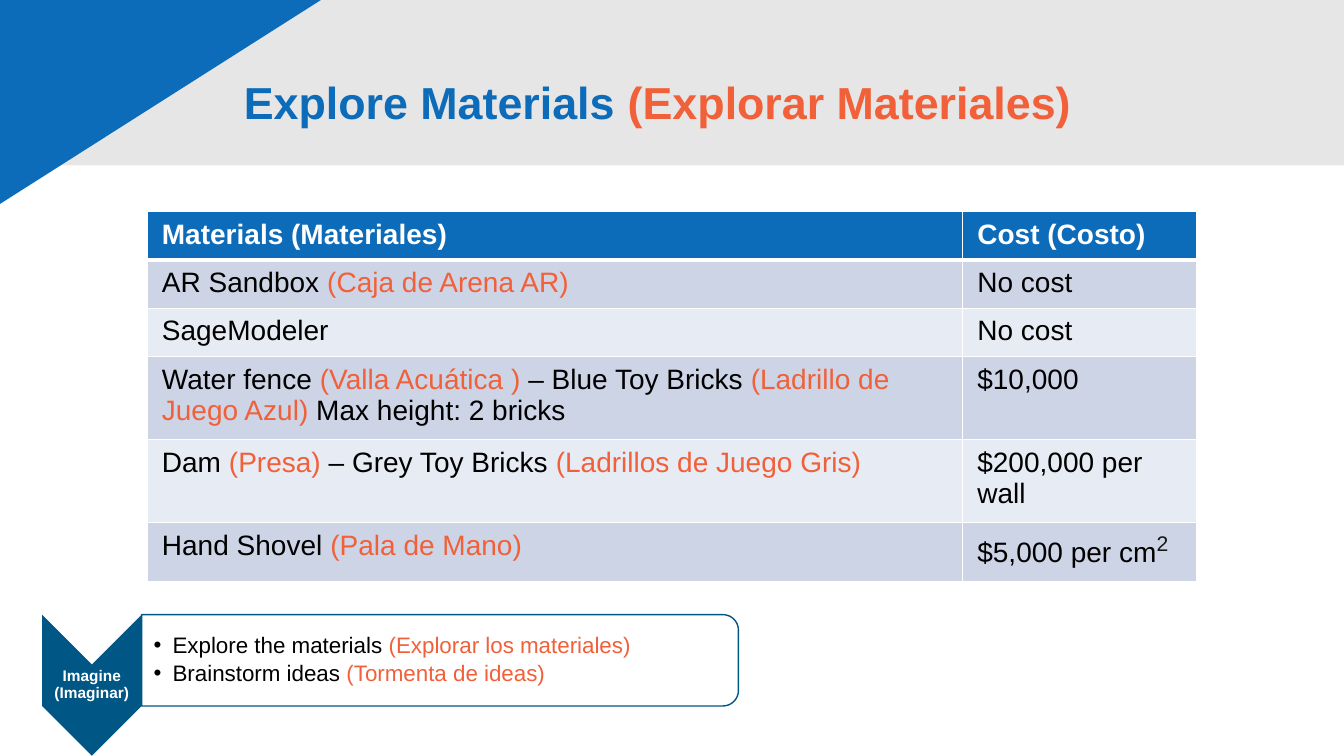
import math

import lxml.etree
import pptx
import pptx.dml.color
import pptx.enum.shapes
import pptx.enum.text
import pptx.oxml.ns
import pptx.util

Cm = pptx.util.Cm
Pt = pptx.util.Pt
qn = pptx.oxml.ns.qn
ALIGN = pptx.enum.text.PP_ALIGN
MIDDLE = pptx.enum.text.MSO_ANCHOR.MIDDLE

BLUE, NAVY, ORANGE = "0D6CB9", "005786", "F16038"
GREY, WHITE, BLACK = "E7E6E6", "FFFFFF", "000000"
ROW_FILLS = ("CCD4E6", "E7EBF3")

# A bar separates English from Spanish text.
MATERIALS = [
    ("AR Sandbox |(Caja de Arena AR)", "No cost"),
    ("SageModeler", "No cost"),
    ("Water fence |(Valla Acuática )| – Blue Toy Bricks |(Ladrillo de Juego Azul)"
     "| Max height: 2 bricks", "$10,000"),
    ("Dam |(Presa)| – Grey Toy Bricks |(Ladrillos de Juego Gris)", "$200,000 per wall"),
    ("Hand Shovel |(Pala de Mano)", "$5,000 per cm"),
]
ROW_HEIGHTS = (1.22, 1.22, 1.22, 2.09, 2.09, 1.48)
COLUMN_WIDTHS = (20.55, 5.89)
STEPS = ("Explore the materials |(Explorar los materiales)",
         "Brainstorm ideas |(Tormenta de ideas)")


def rgb(color):
    return pptx.dml.color.RGBColor.from_string(color)


def write_text(para, text, size=20, color=BLACK, bold=False, align=ALIGN.LEFT,
               line_spacing=None, superscript=False):
    """Add text to a paragraph, with every second bar-separated part in orange."""
    para.alignment = align
    if line_spacing:
        para.line_spacing = line_spacing
    for index, part in enumerate(text.split("|")):
        span = para.add_run()
        span.text = part
        span.font.name = "Arial"
        span.font.size = Pt(size)
        span.font.bold = bold
        span.font.color.rgb = rgb(ORANGE if index % 2 else color)
        if superscript:
            span._r.get_or_add_rPr().set("baseline", "30000")


def set_margins(holder, left, top, right, bottom):
    holder.margin_left, holder.margin_top = Cm(left), Cm(top)
    holder.margin_right, holder.margin_bottom = Cm(right), Cm(bottom)


def paint(shape, fill, line=None):
    shape.shadow.inherit = False
    shape.fill.solid()
    shape.fill.fore_color.rgb = rgb(fill)
    if line:
        shape.line.color.rgb = rgb(line)
        shape.line.width = Pt(1)
    else:
        shape.line.fill.background()


def add_outline(page, points, fill, line=None):
    """Add a closed shape through points given in centimetres."""
    corners = [(Cm(x), Cm(y)) for x, y in points]
    builder = page.shapes.build_freeform(*corners[0])
    builder.add_line_segments(corners[1:], close=True)
    shape = builder.convert_to_shape()
    paint(shape, fill, line)
    return shape


def add_header(page, width, height):
    band = page.shapes.add_shape(pptx.enum.shapes.MSO_SHAPE.RECTANGLE,
                                 0, 0, Cm(width), Cm(height))
    paint(band, GREY)
    add_outline(page, [(0, 0), (8.09, 0), (0, 5.14)], BLUE)

    title = page.shapes.title
    page.shapes._spTree.append(title._element)
    title.left, title.top = Cm(5.89), Cm(0.81)
    title.width, title.height = Cm(24.64), Cm(3.68)
    frame = title.text_frame
    frame.word_wrap = True
    frame.auto_size = pptx.enum.text.MSO_AUTO_SIZE.NONE
    frame.vertical_anchor = MIDDLE
    write_text(frame.paragraphs[0], "Explore Materials |(Explorar Materiales)",
               size=32, color=BLUE, bold=True, line_spacing=0.9)


def format_cell(cell, fill, top=1, bottom=1):
    """Set margins, fill and white borders; top and bottom are in points."""
    set_margins(cell, 0.37, 0.18, 0.37, 0.18)
    properties = cell._tc.get_or_add_tcPr()
    for side, width in (("L", 1), ("R", 1), ("T", top), ("B", bottom)):
        border = lxml.etree.SubElement(properties, qn(f"a:ln{side}"), w=str(Pt(width)))
        solid = lxml.etree.SubElement(border, qn("a:solidFill"))
        lxml.etree.SubElement(solid, qn("a:srgbClr"), val=WHITE)
    cell.fill.solid()
    cell.fill.fore_color.rgb = rgb(fill)


def add_cost_table(page, left, top):
    rows = [("Materials (Materiales)", "Cost (Costo)")] + MATERIALS
    table = page.shapes.add_table(
        len(rows), len(COLUMN_WIDTHS), Cm(left), Cm(top),
        Cm(sum(COLUMN_WIDTHS)), Cm(sum(ROW_HEIGHTS))).table
    for column, width in zip(table.columns, COLUMN_WIDTHS):
        column.width = Cm(width)
    for r, (texts, height) in enumerate(zip(rows, ROW_HEIGHTS)):
        table.rows[r].height = Cm(height)
        header = r == 0
        for c, text in enumerate(texts):
            cell = table.cell(r, c)
            format_cell(cell, BLUE if header else ROW_FILLS[(r - 1) % 2],
                        top=3 if r == 1 else 1, bottom=3 if header else 1)
            write_text(cell.text_frame.paragraphs[0], text,
                       color=WHITE if header else BLACK, bold=header)
    last_cost = table.cell(len(rows) - 1, 1).text_frame.paragraphs[0]
    write_text(last_cost, "2", size=26, color="181717", superscript=True)


def add_bullet(para):
    properties = para._p.get_or_add_pPr()
    properties.set("marL", str(Cm(0.48)))
    properties.set("indent", str(-Cm(0.48)))
    lxml.etree.SubElement(properties, qn("a:buFont"), typeface="Arial")
    lxml.etree.SubElement(properties, qn("a:buChar"), char="•")


def rounded_right_points(left, top, width, height, radius, steps=12):
    """Corners of a box whose two right corners are rounded."""
    points = [(left, top)]
    for center_y, start in ((top + radius, -90), (top + height - radius, 0)):
        for step in range(steps + 1):
            angle = math.radians(start + 90 * step / steps)
            points.append((left + width - radius + radius * math.cos(angle),
                           center_y + radius * math.sin(angle)))
    return points + [(left, top + height)]


def add_step(page, left, top, arrow_width, box_width, height):
    right, middle = left + arrow_width, left + arrow_width / 2
    notch = arrow_width / 2
    arrow = add_outline(page, [
        (left, top), (middle, top + notch), (right, top), (right, top + height),
        (middle, top + height + notch), (left, top + height)], NAVY)
    frame = arrow.text_frame
    frame.word_wrap = True
    frame.vertical_anchor = MIDDLE
    set_margins(frame, 0.02, 0, 0.02, 0)
    write_text(frame.paragraphs[0], "Imagine (Imaginar)", size=11, color=WHITE,
               bold=True, align=ALIGN.CENTER, line_spacing=0.9)

    box = add_outline(page, rounded_right_points(right, top, box_width, height, 0.39),
                      WHITE, NAVY)
    frame = box.text_frame
    frame.word_wrap = True
    frame.vertical_anchor = MIDDLE
    set_margins(frame, 0.3, 0.13, 0.13, 0.13)
    for index, text in enumerate(STEPS):
        para = frame.add_paragraph() if index else frame.paragraphs[0]
        add_bullet(para)
        para.space_after = Pt(3)
        write_text(para, text, size=16, line_spacing=0.9)


def main():
    deck = pptx.Presentation()
    deck.slide_width, deck.slide_height = Cm(33.87), Cm(19.05)
    page = deck.slides.add_slide(deck.slide_layouts.get_by_name("Title Only"))
    add_header(page, 33.87, 4.17)
    add_cost_table(page, 3.71, 5.33)
    add_step(page, 1.06, 15.49, arrow_width=2.51, box_width=15.04, height=2.3)
    deck.save("out.pptx")


if __name__ == "__main__":
    main()
